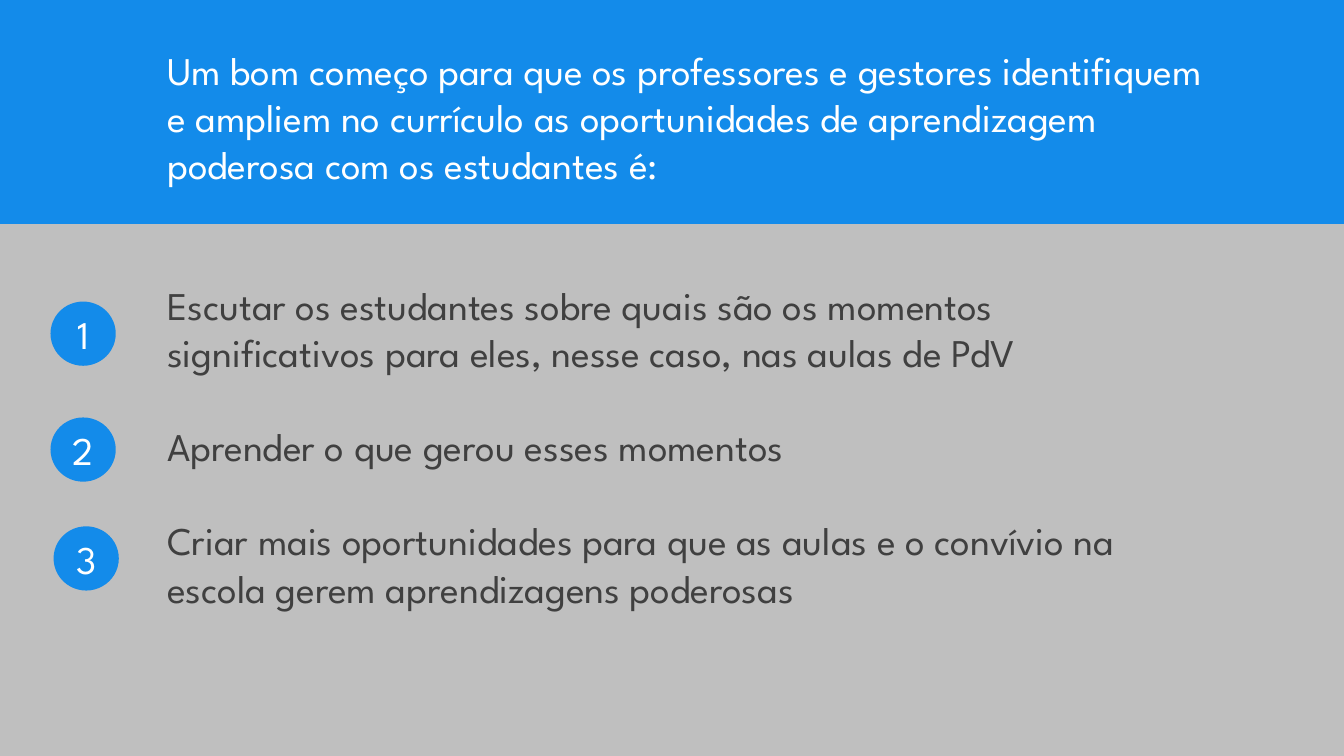
from pptx import Presentation
from pptx.dml.color import RGBColor
from pptx.enum.shapes import MSO_SHAPE
from pptx.enum.text import MSO_ANCHOR, PP_ALIGN
from pptx.util import Inches, Pt

BLUE = "138BEA"
WHITE = "FFFFFF"
GRAY = "BFBFBF"
DARK = "404040"
FONT = "League Spartan"
LINE_HEIGHT = 33.6

INTRODUCTION = (
    "Um bom começo para que os professores e gestores identifiquem e ampliem "
    "no currículo as oportunidades de aprendizagem poderosa com os estudantes é:"
)
STEPS = [
    "Escutar os estudantes sobre quais são os momentos significativos para eles, "
    "nesse caso, nas aulas de PdV",
    "Aprender o que gerou esses momentos",
    "Criar mais oportunidades para que as aulas e o convívio na escola gerem "
    "aprendizagens poderosas",
]
BADGE_POSITIONS = [(0.51, 3), (0.51, 4.15), (0.54, 5.23)]


def color(hex_value):
    return RGBColor.from_string(hex_value)


def write_text(paragraph, text, size=28, fill=WHITE, align=PP_ALIGN.LEFT, space_before=0):
    paragraph.alignment = align
    paragraph.space_before = Pt(space_before)
    run = paragraph.add_run()
    run.text = text
    run.font.name = FONT
    run.font.size = Pt(size)
    run.font.color.rgb = color(fill)


def add_blue_shape(slide, kind, left, top, width, height):
    shape = slide.shapes.add_shape(
        kind, Inches(left), Inches(top), Inches(width), Inches(height)
    )
    shape.shadow.inherit = False
    shape.fill.solid()
    shape.fill.fore_color.rgb = color(BLUE)
    shape.line.color.rgb = color(BLUE)
    shape.line.width = Pt(1.25)
    return shape


def add_badge(slide, number, left, top):
    badge = add_blue_shape(slide, MSO_SHAPE.OVAL, left, top, 0.63, 0.62)
    frame = badge.text_frame
    frame.vertical_anchor = MSO_ANCHOR.MIDDLE
    write_text(frame.paragraphs[0], str(number), align=PP_ALIGN.CENTER)


def add_body(slide):
    """Write the introduction and the steps as one flowing text."""
    box = slide.shapes.add_textbox(Inches(1.56), Inches(0.41), Inches(10.49), Inches(5.76))
    frame = box.text_frame
    frame.word_wrap = True
    write_text(frame.paragraphs[0], INTRODUCTION)
    for index, step in enumerate(STEPS):
        gap = LINE_HEIGHT if index else 2 * LINE_HEIGHT
        write_text(frame.add_paragraph(), step, fill=DARK, space_before=gap)


def main():
    presentation = Presentation()
    presentation.slide_width = Inches(13.33)
    presentation.slide_height = Inches(7.5)
    slide = presentation.slides.add_slide(presentation.slide_layouts[6])
    slide.background.fill.solid()
    slide.background.fill.fore_color.rgb = color(GRAY)

    add_blue_shape(slide, MSO_SHAPE.RECTANGLE, 0, 0, 13.33, 2.21)
    add_body(slide)
    for number, (left, top) in enumerate(BADGE_POSITIONS, start=1):
        add_badge(slide, number, left, top)
    presentation.save("out.pptx")


if __name__ == "__main__":
    main()
